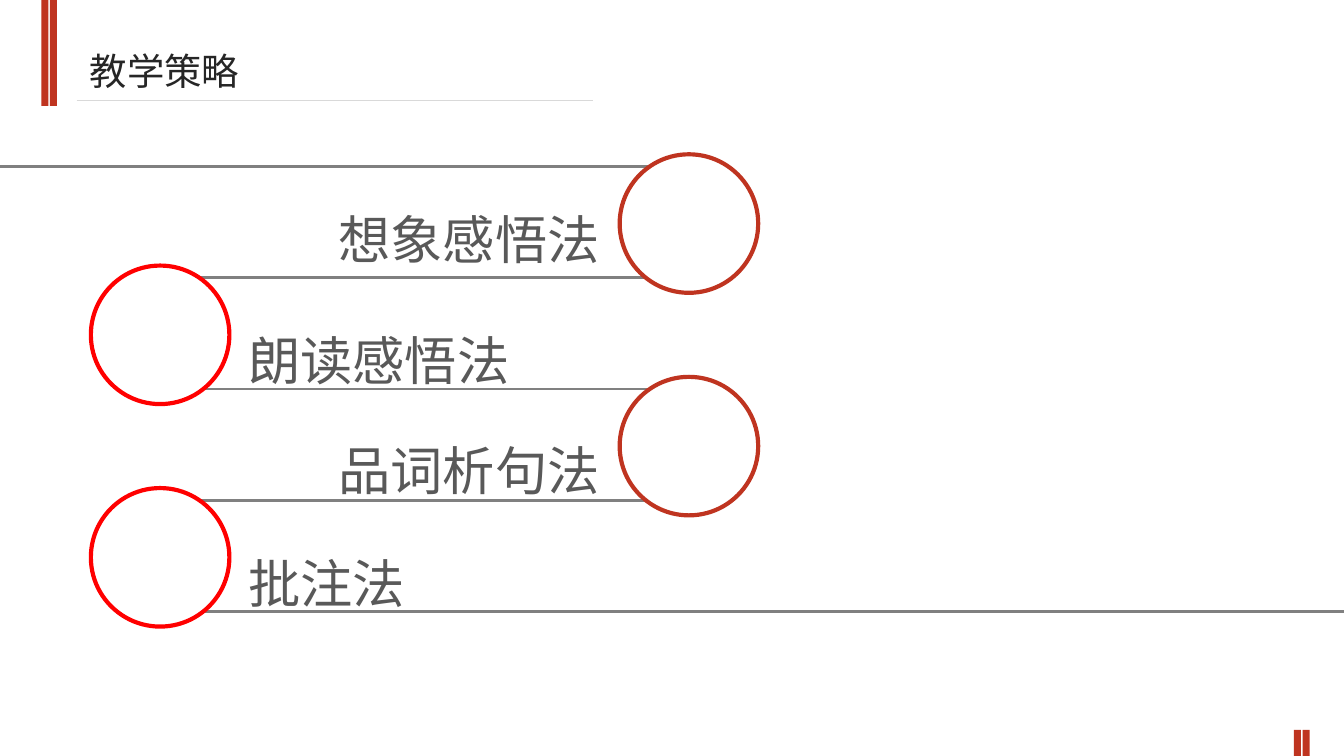
from dataclasses import dataclass

from lxml import etree
from pptx import Presentation
from pptx import util as u
from pptx.dml.color import RGBColor
from pptx.enum import shapes, text
from pptx.oxml.ns import qn

WIDTH, HEIGHT = 720, 405
BRICK, RED, WHITE = "BF3420", "FF0000", "FFFFFF"
INK, BODY, RULE, PALE = "262626", "595959", "808080", "D9D9D9"
PITCH = 59.6  # vertical step between strategies
FIRST_RULE, FIRST_CIRCLE = 89.2, 82.7
RULE_LEFT, RULE_RIGHT = 86.4, 367.2
DIAMETER = 74.2


@dataclass
class Strategy:
    name: str
    on_right: bool
    label_top: float
    label_height: float


STRATEGIES = [
    Strategy("想象感悟法", True, 90.7, 58.3),
    Strategy("朗读感悟法", False, 155.5, 27.4),
    Strategy("品词析句法", True, 214.6, 27.4),
    Strategy("批注法", False, 275, 58.3),
]


def colour(value: str) -> RGBColor:
    return RGBColor.from_string(value)


def add_filled(slide, preset, left: float, top: float, width: float,
               height: float, fill: str, outline: str | None = None):
    figure = slide.shapes.add_shape(
        preset, u.Pt(left), u.Pt(top), u.Pt(width), u.Pt(height))
    figure.shadow.inherit = False
    figure.fill.solid()
    figure.fill.fore_color.rgb = colour(fill)
    if outline:
        figure.line.color.rgb = colour(outline)
        figure.line.width = u.Pt(2.25)
    else:
        figure.line.fill.background()
    return figure


def add_rule(slide, left: float, right: float, y: float,
             stroke: str, weight: float) -> None:
    rule = slide.shapes.add_connector(
        shapes.MSO_CONNECTOR.STRAIGHT, u.Pt(left), u.Pt(y), u.Pt(right), u.Pt(y))
    rule.line.color.rgb = colour(stroke)
    rule.line.width = u.Pt(weight)
    etree.SubElement(rule._element.spPr, qn("a:effectLst"))


def add_text(slide, wording: str, left: float, top: float, width: float,
             height: float, size: float, font: str, ink: str):
    box = slide.shapes.add_textbox(
        u.Pt(left), u.Pt(top), u.Pt(width), u.Pt(height))
    frame = box.text_frame
    frame.word_wrap = True
    frame.auto_size = text.MSO_AUTO_SIZE.SHAPE_TO_FIT_TEXT
    paragraph = frame.paragraphs[0]
    paragraph.text = wording
    paragraph.font.size = u.Pt(size)
    paragraph.font.name = font
    paragraph.font.color.rgb = colour(ink)
    return paragraph


def add_strategy(slide, index: int, strategy: Strategy) -> None:
    circle_left = 332 if strategy.on_right else 48.7
    add_filled(slide, shapes.MSO_SHAPE.OVAL, circle_left,
               FIRST_CIRCLE + index * PITCH, DIAMETER, DIAMETER,
               WHITE, BRICK if strategy.on_right else RED)
    label = add_text(slide, strategy.name, 155.5 if strategy.on_right else 126,
                     strategy.label_top, 172.8, strategy.label_height,
                     28, "Noto Sans CJK SC", BODY)
    label.line_spacing = 1.5
    if strategy.on_right:
        label.alignment = text.PP_ALIGN.RIGHT


def main() -> None:
    deck = Presentation()
    deck.slide_width, deck.slide_height = u.Pt(WIDTH), u.Pt(HEIGHT)
    slide = deck.slides.add_slide(deck.slide_layouts[6])

    # Paired bars in the top left and bottom right corners
    for left, top, height in ((22.2, 0, 56.8), (693.2, 391, 14)):
        for offset in (0, 4.6):
            add_filled(slide, shapes.MSO_SHAPE.RECTANGLE,
                       left + offset, top, 3.8, height, BRICK)

    # Heading
    add_text(slide, "教学策略", 41, 22.3, 304.6, 31.7, 20, "Arial Narrow", INK)
    add_rule(slide, 41, 317.5, 53.7, PALE, 0.75)

    # Rules: the first and last run off the slide
    last = len(STRATEGIES)
    for index in range(last + 1):
        add_rule(slide, 0 if index == 0 else RULE_LEFT,
                 WIDTH if index == last else RULE_RIGHT,
                 FIRST_RULE + index * PITCH, RULE, 1.5)

    # Strategies, alternating sides
    for index, strategy in enumerate(STRATEGIES):
        add_strategy(slide, index, strategy)

    deck.save("out.pptx")


if __name__ == "__main__":
    main()
